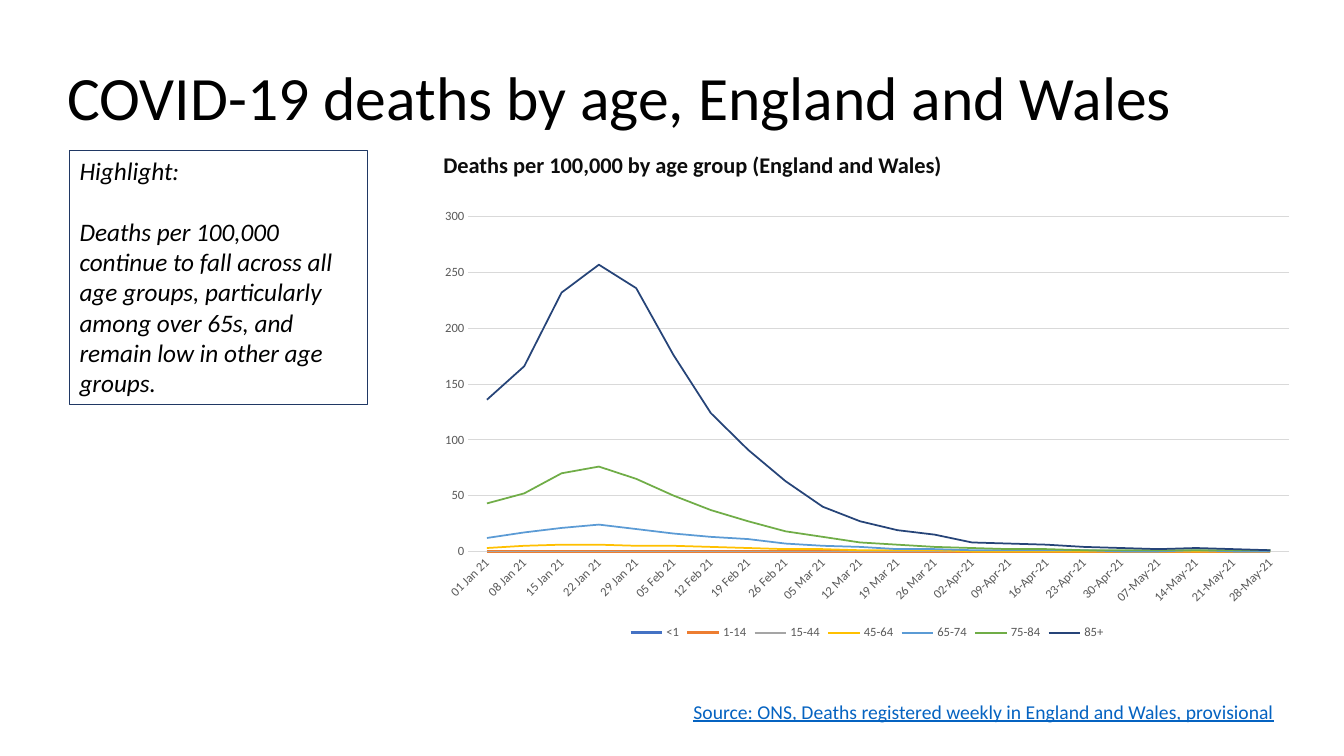
from lxml import etree
from pptx import Presentation
from pptx.chart.data import CategoryChartData
from pptx.dml.color import RGBColor
from pptx.enum.chart import XL_CHART_TYPE as ChartType, XL_LEGEND_POSITION as LegendPosition
from pptx.enum.chart import XL_TICK_MARK as TickMark
from pptx.enum.shapes import MSO_SHAPE as Shape
from pptx.enum.text import MSO_ANCHOR as Anchor, PP_ALIGN as Align
from pptx.util import Inches, Pt

WIDTH, HEIGHT = Inches(13.33), Inches(7.5)
FONT = "Calibri"
BLACK, GREY, PALE = "000000", "595959", "D9D9D9"

WEEKS = [
    "01 Jan 21", "08 Jan 21", "15 Jan 21", "22 Jan 21", "29 Jan 21", "05 Feb 21",
    "12 Feb 21", "19 Feb 21", "26 Feb 21", "05 Mar 21", "12 Mar 21", "19 Mar 21",
    "26 Mar 21", "02-Apr-21", "09-Apr-21", "16-Apr-21", "23-Apr-21", "30-Apr-21",
    "07-May-21", "14-May-21", "21-May-21", "28-May-21",
]
NO_DEATHS = [0] * len(WEEKS)
AGE_GROUPS = [
    ("<1", "4472C4", 2.25, NO_DEATHS),
    ("1-14", "ED7D31", 2.25, NO_DEATHS),
    ("15-44", "A5A5A5", 1.25, NO_DEATHS),
    ("45-64", "FFC000", 1.25,
     [3, 5, 6, 6, 5, 5, 4, 3, 2, 2, 1, 1, 1, 0, 0, 0, 0, 0, 0, 0, 0, 0]),
    ("65-74", "5B9BD5", 1.25,
     [12, 17, 21, 24, 20, 16, 13, 11, 7, 5, 4, 2, 2, 1, 1, 1, 1, 0, 0, 1, 0, 0]),
    ("75-84", "70AD47", 1.25,
     [43, 52, 70, 76, 65, 50, 37, 27, 18, 13, 8, 6, 4, 3, 2, 2, 1, 1, 1, 1, 1, 1]),
    ("85+", "264478", 1.25,
     [136, 166, 232, 257, 236, 176, 124, 91, 63, 40, 27, 19, 15, 8, 7, 6, 4, 3, 2, 3, 2, 1]),
]


def colour(code):
    return RGBColor.from_string(code)


def area(left, top, width, height):
    return [round(share * side / 100) for share, side in
            zip((left, top, width, height), (WIDTH, HEIGHT, WIDTH, HEIGHT))]


def set_all(target, values):
    for name, value in values.items():
        setattr(target, name, value)


def style_font(font, size, code, **extra):
    set_all(font, {"size": Pt(size), "name": FONT, **extra})
    font.color.rgb = colour(code)


def style_line(line, code, width):
    line.color.rgb = colour(code)
    line.width = Pt(width)


def write(box, lines, size, code, align=Align.LEFT, gap=0, **extra):
    frame = box.text_frame
    for index, line in enumerate(lines):
        para = frame.add_paragraph() if index else frame.paragraphs[0]
        para.alignment = align
        if index:
            para.space_before = Pt(gap)
        span = para.add_run()
        span.text = line
        style_font(span.font, size, code, **extra)


def add_title(page, text, place):
    title = page.shapes.title
    set_all(title, dict(zip(("left", "top", "width", "height"), place)))
    set_all(title.text_frame, {"vertical_anchor": Anchor.MIDDLE, "word_wrap": True})
    write(title, [text], 44, BLACK)
    title.text_frame.paragraphs[0].line_spacing = 0.9


def add_highlight(page, lines, place):
    box = page.shapes.add_shape(Shape.RECTANGLE, *place)
    box.shadow.inherit = False
    box.fill.background()
    style_line(box.line, "203864", 0.75)
    set_all(box.text_frame, {"vertical_anchor": Anchor.TOP, "word_wrap": True})
    write(box, lines, 18, BLACK, gap=22, italic=True)


def add_label(page, text, place, size, code, **extra):
    box = page.shapes.add_textbox(*place)
    box.text_frame.word_wrap = False
    write(box, [text], size, code, **extra)


def style_axis(axis):
    set_all(axis, {"major_tick_mark": TickMark.NONE, "minor_tick_mark": TickMark.NONE})
    style_font(axis.tick_labels.font, 9, GREY)


def add_deaths_chart(page, place):
    data = CategoryChartData(number_format="0")
    data.categories = WEEKS
    for name, _, _, values in AGE_GROUPS:
        data.add_series(name, values)
    chart = page.shapes.add_chart(ChartType.LINE, *place, data).chart
    set_all(chart, {"has_title": False, "has_legend": True})
    style_font(chart.font, 10, BLACK)
    set_all(chart.legend, {"position": LegendPosition.BOTTOM, "include_in_layout": False})
    style_font(chart.legend.font, 9, GREY)

    weeks, deaths = chart.category_axis, chart.value_axis
    style_axis(weeks)
    style_axis(deaths)
    style_line(weeks.format.line, PALE, 0.75)
    weeks.tick_labels.font.bold = False
    body = etree.ETXPath("//{http://schemas.openxmlformats.org/drawingml/2006/chart}catAx"
                         "//{http://schemas.openxmlformats.org/drawingml/2006/main}bodyPr")
    body(chart.element)[0].set("rot", "-2700000")
    set_all(deaths, {"minimum_scale": 0, "maximum_scale": 300, "major_unit": 50})
    deaths.format.line.fill.background()
    style_line(deaths.major_gridlines.format.line, PALE, 0.75)

    plot = chart.plots[0]
    plot.vary_by_categories = False
    for series, (_, code, width, _) in zip(plot.series, AGE_GROUPS):
        series.smooth = False
        style_line(series.format.line, code, width)


def main():
    deck = Presentation()
    set_all(deck, {"slide_width": WIDTH, "slide_height": HEIGHT})
    page = deck.slides.add_slide(deck.slide_layouts[5])
    add_title(page, "COVID-19 deaths by age, England and Wales", area(4.28, 3.6, 86.27, 19.33))
    add_highlight(page, [
        "Highlight:",
        "Deaths per 100,000 continue to fall across all age groups, particularly "
        "among over 65s, and remain low in other age groups.",
    ], area(5.18, 19.87, 22.13, 33.6))
    add_label(page, "Source: ONS, Deaths registered weekly in England and Wales, provisional",
              area(50.86, 91.87, 45.16, 4.53), 14, "0563C1", underline=True)
    add_label(page, "Deaths per 100,000 by age group (England and Wales)",
              area(31.81, 19.33, 39.46, 4.93), 16, "0D0D0D", align=Align.CENTER, bold=True)
    add_deaths_chart(page, area(31.81, 26.53, 65.42, 58.67))
    deck.save("out.pptx")


if __name__ == "__main__":
    main()
